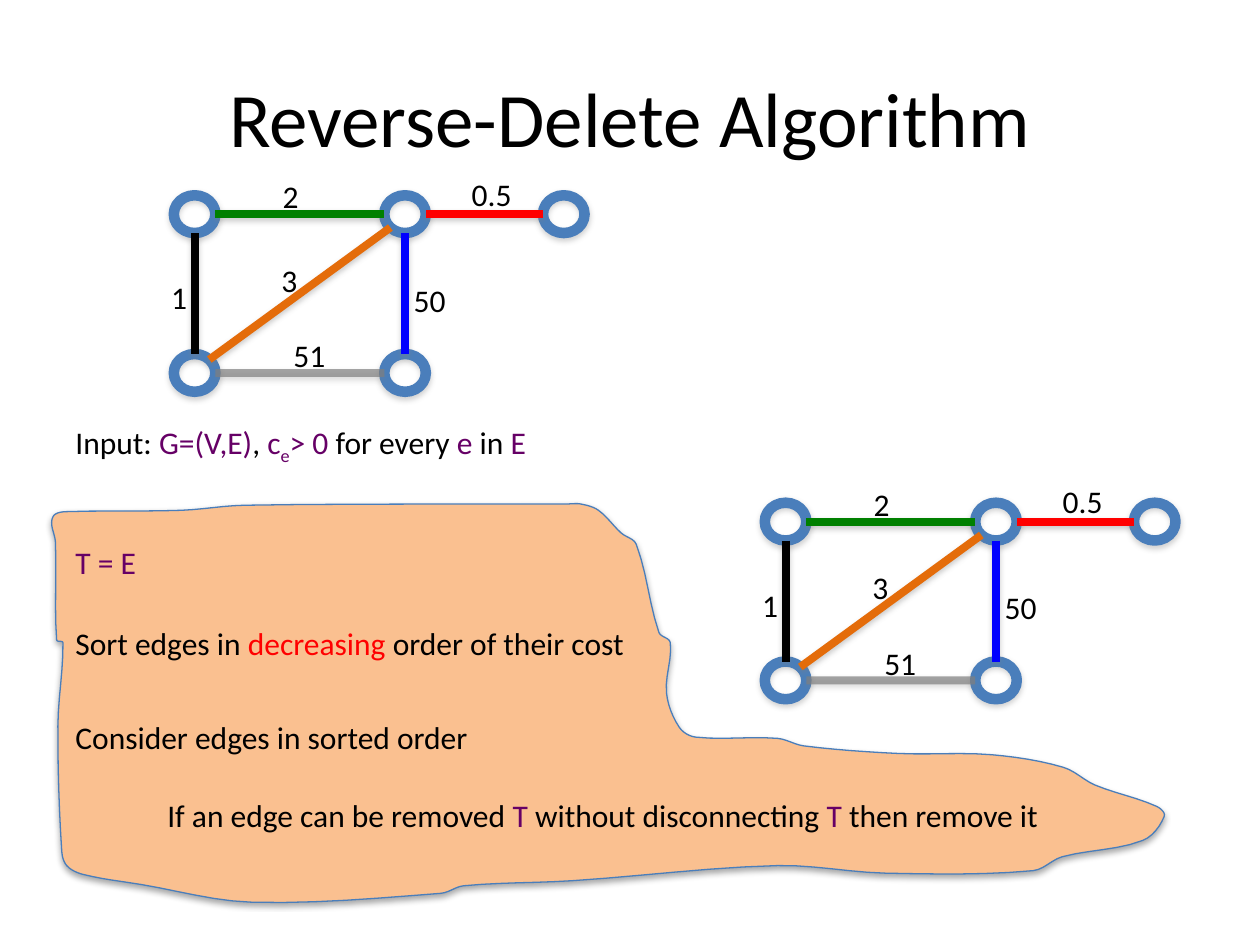
import itertools
import math

import pptx
import pptx.dml.color
import pptx.enum.shapes
import pptx.enum.text
import pptx.oxml
import pptx.oxml.ns
import pptx.util
from pptx.util import Inches

FONT = "Calibri"
COLORS = {
    "black": "000000", "purple": "660066", "red": "FF0000", "green": "008000",
    "gray": "7F7F7F", "blue": "0000FF", "orange": "E46C0A",
    "outline": "4A7EBB", "cloud": "FAC090", "shadow": "808080",
}

# Graph: nodes sit on a grid and edges name the nodes they join
NODE_WIDTH, NODE_HEIGHT = 0.33, 0.3
COLUMNS = {"left": 1.38, "middle": 3.05, "right": 4.31}
ROWS = {"top": 1.55, "bottom": 2.81}
NODES = {
    "A": ("left", "top"), "B": ("middle", "top"), "C": ("right", "top"),
    "D": ("middle", "bottom"), "E": ("left", "bottom"),
}
# Start, end, colour, opacity, weight, shift of the weight from the edge's middle
EDGES = [
    ("A", "B", "green", 100, "2", (-0.07, -0.14)),
    ("A", "E", "black", 100, "1", (-0.12, 0.03)),
    ("E", "D", "gray", 69, "51", (0.08, -0.14)),
    ("B", "D", "blue", 100, "50", (0.2, 0.05)),
    ("B", "C", "red", 100, "0.5", (0.06, -0.16)),
    ("E", "B", "orange", 100, "3", (-0.08, -0.11)),
]
GRAPH_OFFSETS = {"input graph": (0, 0), "working graph": (4.69, 2.44)}
LABEL_HEIGHT = 0.4
WEIGHT_WIDTHS = {1: 0.33, 2: 0.46, 3: 0.52}  # by number of characters

# Algorithm lines: left, top, width, then text spans with their colours
STEPS = [
    (0.5, 3.31, 3.81, [
        ("Input: ", "black"), ("G=(V,E)", "purple"), (", ", "black"),
        ("c", "purple"), ("e", "purple", -25), ("> 0 ", "purple"),
        ("for every ", "black"), ("e", "purple"), (" in ", "black"), ("E", "purple")]),
    (0.5, 4.26, 0.69, [("T = E", "purple")]),
    (0.5, 4.9, 4.6, [
        ("Sort edges in ", "black"), ("decreasing", "red"),
        (" order of their cost", "black")]),
    (0.5, 5.65, 3.35, [("Consider edges in sorted order", "black")]),
    (1.23, 6.27, 7.3, [
        ("If an edge can be removed ", "black"), ("T", "purple"),
        (" without disconnecting ", "black"), ("T", "purple"),
        (" then remove it", "black")]),
]

# Cloud behind the algorithm: a few anchors per side, joined by a smooth curve
CLOUD_SIDES = {
    "left": [(0.41, 4.15), (0.44, 4.3), (0.45, 5.08), (0.5, 5.1), (0.46, 5.76),
             (0.49, 6.75), (0.53, 6.87)],
    "bottom": [(0.66, 6.94), (1.12, 7.02), (1.99, 7.16), (3.5, 7.09), (3.68, 7.03),
               (4.54, 6.99), (6.17, 6.87), (7.03, 6.93), (8.2, 6.91)],
    "tip": [(8.43, 6.8), (9.07, 6.67), (9.24, 6.48), (9.18, 6.4), (8.69, 6.23),
            (8.44, 6.09)],
    "shelf": [(7.87, 5.99), (7.13, 5.98), (6.38, 5.92), (6.17, 5.86), (5.52, 5.85),
              (5.39, 5.77), (5.29, 5.5)],
    "right": [(5.32, 5.1), (5.23, 5.02), (5.05, 4.32), (4.93, 4.23), (4.75, 4.05)],
    "top": [(4.61, 4), (4.5, 4), (1.94, 4.01), (1.44, 4.05), (0.56, 4.06), (0.44, 4.08)],
}
CURVE_STEPS = 6


def rgb(name):
    return pptx.dml.color.RGBColor.from_string(COLORS[name])


def set_line(shape, color, width):
    shape.line.color.rgb = rgb(color)
    shape.line.width = pptx.util.Pt(width)


def add_shadow(shape, color, opacity):
    """Append a soft shadow falling straight down."""
    shape._element.spPr.append(pptx.oxml.parse_xml(
        f'<a:effectLst {pptx.oxml.ns.nsdecls("a")}>'
        '<a:outerShdw blurRad="40000" dist="22000" dir="5400000" rotWithShape="0">'
        f'<a:srgbClr val="{COLORS[color]}"><a:alpha val="{opacity * 1000}"/>'
        '</a:srgbClr></a:outerShdw></a:effectLst>'))


def smooth_loop(anchors):
    """Round a closed loop: each anchor's tangent runs parallel to its neighbours."""
    count = len(anchors)
    tangents = []
    for index in range(count):
        (x1, y1), (x2, y2) = anchors[index - 1], anchors[(index + 1) % count]
        length = math.dist((x1, y1), (x2, y2))
        tangents.append(((x2 - x1) / length, (y2 - y1) / length))
    points = []
    for index in range(count):
        following = (index + 1) % count
        start, end = anchors[index], anchors[following]
        reach = math.dist(start, end) / 3
        for step in range(CURVE_STEPS):
            t = step / CURVE_STEPS
            points.append(tuple(
                (1 - t) ** 3 * a + 3 * (1 - t) ** 2 * t * (a + reach * leave)
                + 3 * (1 - t) * t ** 2 * (b - reach * arrive) + t ** 3 * b
                for a, b, leave, arrive
                in zip(start, end, tangents[index], tangents[following])))
    return points


def add_cloud(page):
    anchors = list(itertools.chain.from_iterable(CLOUD_SIDES.values()))
    points = [(Inches(x), Inches(y)) for x, y in smooth_loop(anchors)]
    builder = page.shapes.build_freeform(*points[0])
    builder.add_line_segments(points[1:], close=True)
    cloud = builder.convert_to_shape()
    cloud.fill.solid()
    cloud.fill.fore_color.rgb = rgb("cloud")
    set_line(cloud, "outline", 0.75)
    add_shadow(cloud, "black", 35)


def add_title(page, text):
    title = page.shapes.title
    title.left, title.top = Inches(0.5), Inches(0.3)
    title.width, title.height = Inches(9), Inches(1.25)
    title.text_frame.text = text
    title.text_frame.vertical_anchor = pptx.enum.text.MSO_ANCHOR.MIDDLE
    paragraph = title.text_frame.paragraphs[0]
    paragraph.alignment = pptx.enum.text.PP_ALIGN.CENTER
    paragraph.font.name = FONT
    paragraph.font.size = pptx.util.Pt(44)
    paragraph.font.color.rgb = rgb("black")


def add_label(shapes, left, top, width, spans):
    box = shapes.add_textbox(*map(Inches, (left, top, width, LABEL_HEIGHT)))
    box.text_frame.word_wrap = False
    box.text_frame.auto_size = pptx.enum.text.MSO_AUTO_SIZE.SHAPE_TO_FIT_TEXT
    paragraph = box.text_frame.paragraphs[0]
    paragraph.font.name = FONT
    paragraph.font.size = pptx.util.Pt(18)
    for text, color, *baseline in spans:
        span = paragraph.add_run()
        span.text = text
        span.font.color.rgb = rgb(color)
        if baseline:
            span._r.get_or_add_rPr().set("baseline", str(baseline[0] * 1000))


def add_node(shapes, center):
    x, y = center
    node = shapes.add_shape(pptx.enum.shapes.MSO_SHAPE.OVAL, *map(Inches, (
        x - NODE_WIDTH / 2, y - NODE_HEIGHT / 2, NODE_WIDTH, NODE_HEIGHT)))
    node.fill.background()
    set_line(node, "outline", 6)
    add_shadow(node, "shadow", 35)


def rim_point(center, target):
    """Point on a node's rim towards target, in one of eight directions."""
    signs = [(b > a) - (b < a) for a, b in zip(center, target)]
    scale = math.hypot(*signs)
    return (center[0] + signs[0] * NODE_WIDTH / 2 / scale,
            center[1] + signs[1] * NODE_HEIGHT / 2 / scale)


def add_edge(shapes, start, end, color, opacity):
    edge = shapes.add_connector(
        pptx.enum.shapes.MSO_CONNECTOR.STRAIGHT,
        *map(Inches, rim_point(start, end) + rim_point(end, start)))
    set_line(edge, color, 4.5)
    if opacity < 100:
        tint = edge._element.spPr.find(".//" + pptx.oxml.ns.qn("a:srgbClr"))
        tint.append(pptx.oxml.parse_xml(
            f'<a:alpha {pptx.oxml.ns.nsdecls("a")} val="{opacity * 1000}"/>'))
    add_shadow(edge, "shadow", 38)


def add_weight(shapes, start, end, weight, shift):
    x, y = ((a + b) / 2 + move for a, b, move in zip(start, end, shift))
    width = WEIGHT_WIDTHS[len(weight)]
    add_label(shapes, x - width / 2, y - LABEL_HEIGHT / 2, width, [(weight, "black")])


def add_graph(page, dx, dy):
    shapes = page.shapes.add_group_shape().shapes
    centers = {name: (COLUMNS[column] + NODE_WIDTH / 2 + dx, ROWS[row] + NODE_HEIGHT / 2 + dy)
               for name, (column, row) in NODES.items()}
    for center in centers.values():
        add_node(shapes, center)
    for start, end, color, opacity, weight, shift in EDGES:
        add_edge(shapes, centers[start], centers[end], color, opacity)
        add_weight(shapes, centers[start], centers[end], weight, shift)


def main():
    deck = pptx.Presentation()
    deck.slide_width, deck.slide_height = Inches(10), Inches(7.5)
    page = deck.slides.add_slide(deck.slide_layouts[5])
    add_title(page, "Reverse-Delete Algorithm")
    add_cloud(page)
    for step in STEPS:
        add_label(page.shapes, *step)
    for offset in GRAPH_OFFSETS.values():
        add_graph(page, *offset)
    deck.save("out.pptx")


if __name__ == "__main__":
    main()
